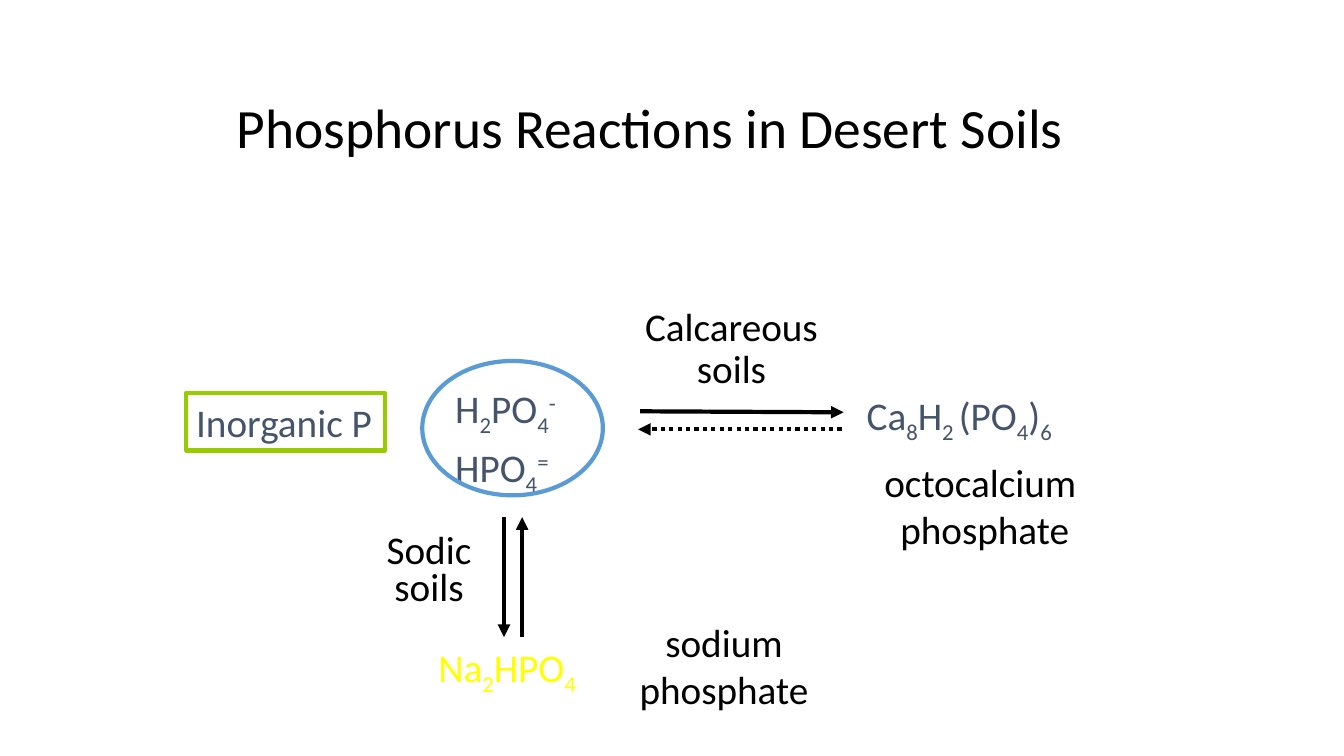
from dataclasses import dataclass

from lxml.etree import SubElement
from pptx import Presentation
from pptx.dml.color import RGBColor
from pptx.enum.dml import MSO_LINE
from pptx.enum.shapes import MSO_CONNECTOR, MSO_SHAPE
from pptx.enum.text import MSO_ANCHOR, MSO_AUTO_SIZE, PP_ALIGN
from pptx.oxml.ns import qn
from pptx.util import Pt


@dataclass(frozen=True)
class Theme:
    font: str = "Calibri"
    title_size: float = 39.6
    body_size: float = 28
    line_width: float = 3
    black: RGBColor = RGBColor(0x00, 0x00, 0x00)
    slate: RGBColor = RGBColor(0x44, 0x54, 0x6A)
    yellow: RGBColor = RGBColor(0xFF, 0xFF, 0x00)
    green: RGBColor = RGBColor(0x99, 0xCC, 0x00)
    blue: RGBColor = RGBColor(0x5B, 0x9B, 0xD5)


THEME = Theme()
SUB, SUP = -25, 30

PHOSPHATE_IONS = [
    [("H", 0), ("2", SUB), ("PO", 0), ("4", SUB), ("-", SUP)],
    [("HPO", 0), ("4", SUB), ("=", SUP)],
]
OCTOCALCIUM = [[("Ca", 0), ("8", SUB), ("H", 0), ("2 ", SUB), ("(PO", 0),
                ("4", SUB), (")", 0), ("6", SUB)]]
DISODIUM = [[("Na", 0), ("2", SUB), ("HPO", 0), ("4", SUB)]]


def plain(*lines):
    return [[(line, 0)] for line in lines]


def write(frame, lines, color, size=THEME.body_size, align=PP_ALIGN.LEFT, spacing=1.0):
    for index, line in enumerate(lines):
        paragraph = frame.add_paragraph() if index else frame.paragraphs[0]
        paragraph.alignment = align
        paragraph.line_spacing = spacing
        for words, baseline in line:
            run = paragraph.add_run()
            run.text = words
            run.font.name = THEME.font
            run.font.size = Pt(size)
            run.font.color.rgb = color
            if baseline:
                run.font._element.set("baseline", str(baseline * 1000))


def fit(frame):
    frame.word_wrap = False
    frame.auto_size = MSO_AUTO_SIZE.SHAPE_TO_FIT_TEXT


def add_label(slide, box, lines, color=THEME.black, align=PP_ALIGN.CENTER, spacing=1.0):
    frame = slide.shapes.add_textbox(*map(Pt, box)).text_frame
    fit(frame)
    write(frame, lines, color, align=align, spacing=spacing)


def add_outline(slide, preset, box, color):
    outline = slide.shapes.add_shape(preset, *map(Pt, box))
    outline.shadow.inherit = False
    outline.fill.background()
    outline.line.color.rgb = color
    outline.line.width = Pt(THEME.line_width)
    return outline


def add_arrow(group, start, end, dash=None):
    arrow = group.shapes.add_connector(MSO_CONNECTOR.STRAIGHT, *map(Pt, start + end))
    arrow.line.color.rgb = THEME.black
    arrow.line.width = Pt(THEME.line_width)
    if dash:
        arrow.line.dash_style = dash
    SubElement(arrow.line._get_or_add_ln(), qn("a:tailEnd"), type="triangle")
    SubElement(arrow._element.spPr, qn("a:effectLst"))


def add_title(slide, box):
    frame = slide.shapes.add_textbox(*map(Pt, box)).text_frame
    frame.word_wrap = True
    frame.vertical_anchor = MSO_ANCHOR.MIDDLE
    write(frame, plain("Phosphorus Reactions in Desert Soils"), THEME.black,
          THEME.title_size, spacing=0.9)


def add_inorganic_pool(slide, box):
    left, top, width, height = box
    ring_width = 129
    ring_left = left + width - ring_width
    add_label(slide, (ring_left + 16.5, top + 9.3, 90.7, 82), PHOSPHATE_IONS,
              THEME.slate, PP_ALIGN.LEFT, 1.1)
    pool = add_outline(slide, MSO_SHAPE.RECTANGLE, (left, top + 23, 142, 41), THEME.green)
    fit(pool.text_frame)
    pool.text_frame.vertical_anchor = MSO_ANCHOR.TOP
    write(pool.text_frame, plain("Inorganic P"), THEME.slate)
    add_outline(slide, MSO_SHAPE.OVAL, (ring_left, top, ring_width, height), THEME.blue)


def add_calcareous_reaction(slide, box):
    left, top, width, height = box
    add_label(slide, (left, top, 139, 68.4), plain("Calcareous", "soils"), spacing=0.9)
    add_label(slide, (left + 159, top + 59.8, 154, 41), OCTOCALCIUM,
              THEME.slate, PP_ALIGN.LEFT)
    add_label(slide, (left + width - 160, top + height - 75, 160, 75),
              plain("octocalcium ", "phosphate"))
    arrows = slide.shapes.add_group_shape()
    add_arrow(arrows, (left + 4.2, top + 77.8), (left + 149.6, top + 78.5))
    add_arrow(arrows, (left + 148.2, top + 90.7), (left + 2.8, top + 90.7),
              MSO_LINE.ROUND_DOT)


def add_sodic_reaction(slide, box):
    left, top, width, height = box
    add_label(slide, (left, top + 8.6, 75.6, 61.2), plain("Sodic", "soils"), spacing=0.8)
    add_label(slide, (left + 37.4, top + 86.4, 116.6, 41), DISODIUM,
              THEME.yellow, PP_ALIGN.LEFT)
    add_label(slide, (left + width - 137, top + height - 75, 137, 75),
              plain("sodium", "phosphate"))
    arrows = slide.shapes.add_group_shape()
    bottom = top + 85.7
    add_arrow(arrows, (left + 91.4, top), (left + 91.4, bottom))
    add_arrow(arrows, (left + 104.4, bottom), (left + 104.4, top))


def main():
    presentation = Presentation()
    presentation.slide_width, presentation.slide_height = Pt(960), Pt(540)
    slide = presentation.slides.add_slide(presentation.slide_layouts[6])
    add_title(slide, (162, 48, 612, 90))
    add_inorganic_pool(slide, (133, 257.8, 297.6, 96))
    add_calcareous_reaction(slide, (453, 216, 330.4, 183))
    add_sodic_reaction(slide, (268.6, 369.4, 317, 143.4))
    presentation.save("out.pptx")


if __name__ == "__main__":
    main()
